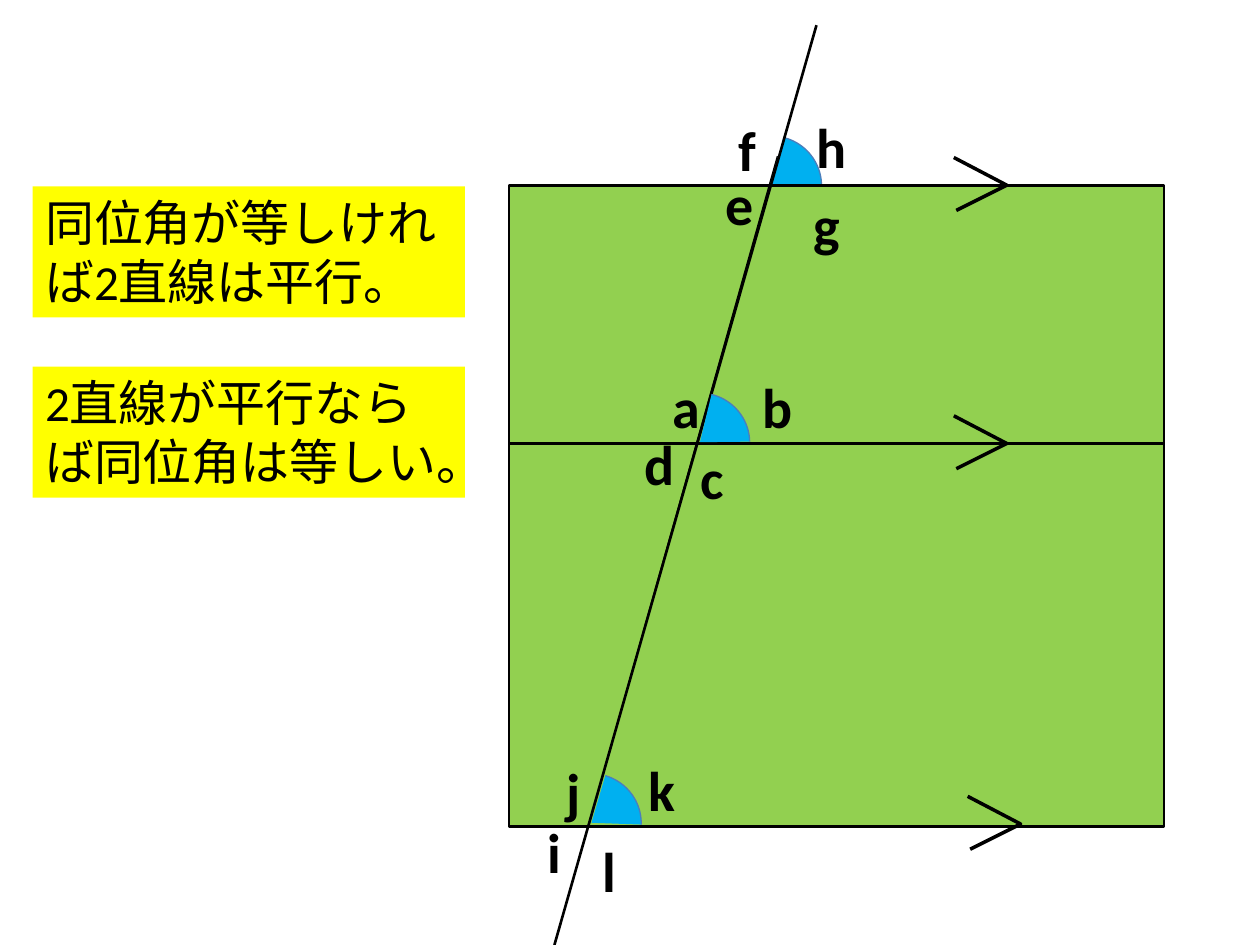
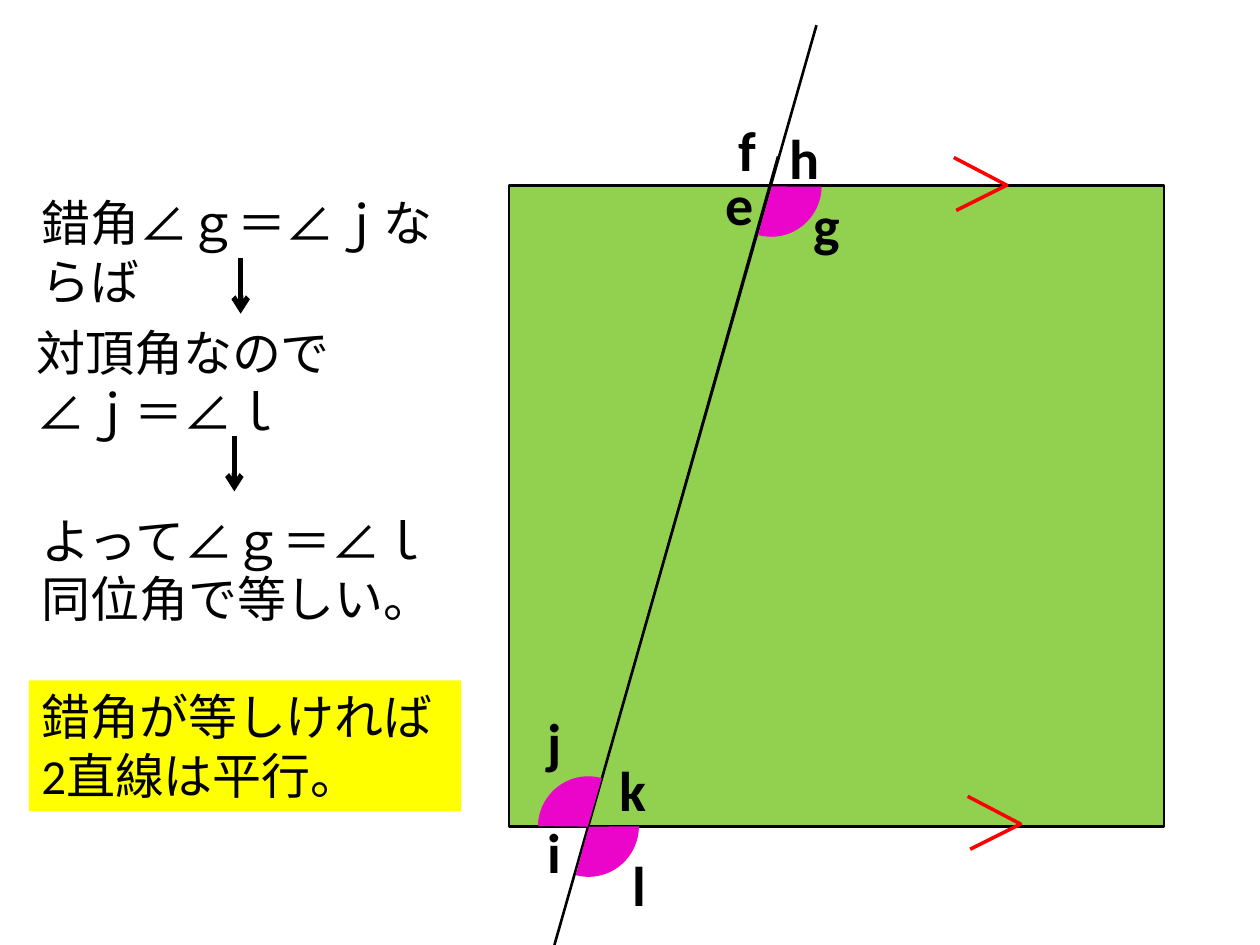
import lxml.etree
import pptx
import pptx.dml.color
import pptx.enum.shapes
import pptx.enum.text
import pptx.oxml.ns
import pptx.util

PX = 9144
SHAPE = pptx.enum.shapes.MSO_SHAPE
COLORS = {
    "ink": "000000",
    "field": "92D050",
    "note": "FFFF00",
    "blue": "00B0F0",
    "blue_edge": "4B7EBC",
    "magenta": "EB05CA",
    "red": "FF0000",
}
LETTER_WIDTHS = {"a": 42, "b": 44, "c": 39, "d": 44, "e": 41, "f": 33,
                 "g": 40, "h": 43, "i": 30, "j": 30, "k": 40, "l": 30}
ACUTE = (161.24, 206.66)
OBTUSE = (148.09, 211.41)


class Board:
    font = "Calibri"
    body_size = 28
    letter_size = 32

    def __init__(self, prs):
        self.prs = prs
        self.slide = None

    def new_slide(self):
        self.slide = self.prs.slides.add_slide(self.prs.slide_layouts[6])

    def color(self, name):
        return pptx.dml.color.RGBColor.from_string(COLORS[name])

    def paint(self, sp, fill=None, line=None, width=0.75):
        sp.shadow.inherit = False
        if fill:
            sp.fill.solid()
            sp.fill.fore_color.rgb = self.color(fill)
        else:
            sp.fill.background()
        if line:
            sp.line.color.rgb = self.color(line)
            sp.line.width = pptx.util.Pt(width)
        else:
            sp.line.fill.background()

    def shape(self, kind, x, y, w, h, fill, line, width=0.75):
        sp = self.slide.shapes.add_shape(kind, x * PX, y * PX, w * PX, h * PX)
        self.paint(sp, fill, line, width)
        return sp

    def angle(self, x, y, turn, span, fill, line):
        sp = self.shape(SHAPE.ARC, x, y, 79, 78, fill, line)
        sp.adjustments[0], sp.adjustments[1] = span
        sp.rotation = turn

    def line(self, x1, y1, x2, y2, width=1.5, arrow=False):
        cx = self.slide.shapes.add_connector(
            pptx.enum.shapes.MSO_CONNECTOR.STRAIGHT,
            x1 * PX, y1 * PX, x2 * PX, y2 * PX)
        cx.line.color.rgb = self.color("ink")
        cx.line.width = pptx.util.Pt(width)
        qn = pptx.oxml.ns.qn
        if arrow:
            ln = cx.line._get_or_add_ln()
            lxml.etree.SubElement(ln, qn("a:tailEnd"), type="arrow")
        lxml.etree.SubElement(cx._element.spPr, qn("a:effectLst"))

    def parallel_mark(self, x, y, color):
        fb = self.slide.shapes.build_freeform(x, y, scale=PX)
        fb.add_line_segments([(x + 42, y + 22), (x + 2, y + 42)], close=False)
        self.paint(fb.convert_to_shape(), line=color, width=2)

    def text(self, x, y, w, h, lines, size=body_size, bold=False, wrap=True, fill=None):
        sp = self.slide.shapes.add_textbox(x * PX, y * PX, w * PX, h * PX)
        if fill:
            sp.fill.solid()
            sp.fill.fore_color.rgb = self.color(fill)
        tf = sp.text_frame
        tf.word_wrap = wrap
        tf.auto_size = pptx.enum.text.MSO_AUTO_SIZE.SHAPE_TO_FIT_TEXT
        for i, line in enumerate(lines):
            p = tf.add_paragraph() if i else tf.paragraphs[0]
            r = p.add_run()
            r.text = line
            r.font.name = self.font
            r.font.size = pptx.util.Pt(size)
            r.font.bold = bold
            r.font.color.rgb = self.color("ink")

    def note(self, x, y, text):
        self.text(x, y, 343, 104, [text], fill="note")

    def letters(self, places):
        for letter, (x, y) in places.items():
            self.text(x, y, LETTER_WIDTHS[letter], 64, [letter],
                      size=self.letter_size, bold=True, wrap=False)

    def figure(self, places, mark_color):
        self.shape(SHAPE.RECTANGLE, 404, 147, 520, 509, "field", "ink", 1.5)
        self.line(467, 656, 617, 124, 0.75)
        self.line(440, 750, 648, 20)
        common = {"e": (566, 130), "g": (636, 146), "f": (576, 87), "i": (425, 644)}
        self.letters({**common, **places})
        self.parallel_mark(757, 125, mark_color)
        self.parallel_mark(768, 632, mark_color)


def corresponding_angles(board):
    board.new_slide()
    board.angle(573, 108, 14.9, ACUTE, "blue", "blue_edge")
    board.figure({"k": (505, 595), "j": (440, 596), "l": (468, 659), "h": (638, 84),
                  "a": (524, 291), "b": (595, 291), "c": (546, 347), "d": (502, 336)},
                 "ink")
    board.angle(430, 614, 17.6, ACUTE, "blue", "blue_edge")
    board.line(404, 352, 924, 352)
    board.angle(516, 312, 14.9, ACUTE, "blue", "blue_edge")
    board.parallel_mark(757, 330, "ink")
    board.note(26, 148, "同位角が等しければ2直線は平行。")
    board.note(26, 291, "2直線が平行ならば同位角は等しい。")


def alternate_angles(board):
    board.new_slide()
    board.figure({"k": (482, 595), "j": (425, 557), "l": (492, 670), "h": (617, 93)}, "red")
    for x, y, turn in ((573, 109, 113.3), (427, 617, 293.8), (428, 617, 113.1)):
        board.angle(x, y, turn, OBTUSE, "magenta", "magenta")
    board.text(23, 148, 359, 57, ["錯角∠ｇ＝∠ｊならば"])
    board.text(19, 251, 343, 104, ["対頂角なので", "∠ｊ＝∠ｌ"])
    board.text(23, 400, 343, 104, ["よって∠ｇ＝∠ｌ", "同位角で等しい。"])
    board.note(23, 540, "錯角が等しければ2直線は平行。")
    for x, y in ((191, 205), (186, 346)):
        board.line(x, y, x, y + 44, 3, arrow=True)


def main():
    prs = pptx.Presentation()
    prs.slide_width = 1000 * PX
    prs.slide_height = 750 * PX
    board = Board(prs)
    corresponding_angles(board)
    alternate_angles(board)
    prs.save("out.pptx")


if __name__ == "__main__":
    main()
